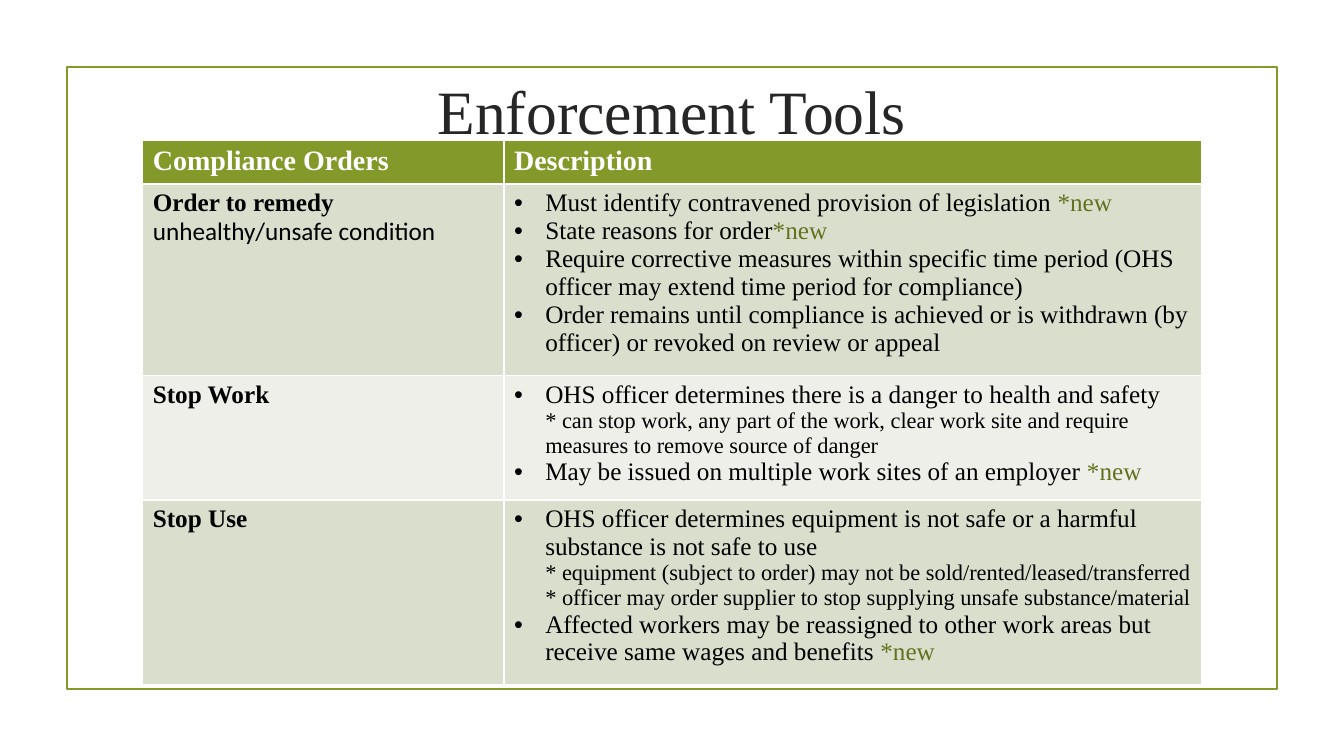
from lxml.etree import SubElement
from pptx import Presentation
from pptx.dml.color import RGBColor
from pptx.enum.shapes import MSO_SHAPE as Shape
from pptx.enum.text import MSO_ANCHOR as Anchor, PP_ALIGN as Align
from pptx.oxml.ns import qn
from pptx.util import Inches, Pt

UNIT = Inches(1) / 12
WIDE, HIGH = 160, 90
LEFT = 17
COLS = (43, 83)
ROWS = (4.9, 21, 13.8, 20.4)
FACE = "Times New Roman"
GREEN, TAG = "83992A", "62731F"
BANDS = ("D9DECD", "EDEFE8")
HEADS = ("Compliance Orders", "Description")
NEW = "*new"
ORDERS = (
    ("Order to remedy \nunhealthy/unsafe condition", (
        ("Must identify contravened provision of legislation ", NEW),
        ("State reasons for order", NEW),
        ("Require corrective measures within specific time period "
         "(OHS officer may extend time period for compliance)", ""),
        ("Order remains until compliance is achieved or is withdrawn "
         "(by officer) or revoked on review or appeal", ""),
    )),
    ("Stop Work", (
        ("OHS officer determines there is a danger to health and safety\n"
         "* can stop work, any part of the work, clear work site and require "
         "measures to remove source of danger", ""),
        ("May be issued on multiple work sites of an employer ", NEW),
    )),
    ("Stop Use", (
        ("OHS officer determines equipment is not safe or a harmful "
         "substance is not safe to use\n"
         "* equipment (subject to order) may not be sold/rented/leased/transferred\n"
         "* officer may order supplier to stop supplying unsafe substance/material", ""),
        ("Affected workers may be reassigned to other work areas but "
         "receive same wages and benefits ", NEW),
    )),
)


def grid(*units):
    return [round(unit * UNIT) for unit in units]


def color(code):
    return RGBColor.from_string(code)


def style(run, size, code, bold=False):
    font = run.font
    font.name, font.size, font.bold = FACE, Pt(size), bold
    font.color.rgb = color(code)


def frame(slide):
    box = slide.shapes.add_shape(Shape.RECTANGLE, *grid(8, 8, 144, 74))
    box.shadow.inherit = False
    box.fill.background()
    box.line.color.rgb = color(GREEN)
    box.line.width = Pt(1.25)


def title(slide, text):
    box = slide.shapes.add_textbox(*grid(LEFT, 4.5, sum(COLS), 17.2))
    body = box.text_frame
    body.word_wrap = True
    body.vertical_anchor = Anchor.MIDDLE
    body.text = text
    para = body.paragraphs[0]
    para.alignment = Align.CENTER
    style(para.runs[0], 44, "262626")


def paint(cell, code):
    cell.fill.solid()
    cell.fill.fore_color.rgb = color(code)


def label(cell, text, size, code, fill):
    paint(cell, fill)
    cell.text_frame.text = text
    for run in cell.text_frame.paragraphs[0].runs:
        style(run, size, code, True)


def bullet(para, text, tag):
    para.text = text
    props = para._p.get_or_add_pPr()
    indent = Inches(0.31)
    props.set("marL", str(indent))
    props.set("indent", str(-indent))
    SubElement(props, qn("a:buFont"), typeface="Arial")
    SubElement(props, qn("a:buChar"), char="•")
    for run in para.runs:
        style(run, 16 if run.text.startswith("* ") else 18, "000000")
    for gap in para._p.findall(qn("a:br")):
        SubElement(gap, qn("a:rPr"), sz="1600")
    if tag:
        run = para.add_run()
        run.text = tag
        style(run, 18, TAG)


def points(cell, items, fill):
    paint(cell, fill)
    body = cell.text_frame
    for i, (text, tag) in enumerate(items):
        para = body.add_paragraph() if i else body.paragraphs[0]
        bullet(para, text, tag)


def orders(slide):
    place = grid(LEFT, 16.7, sum(COLS), sum(ROWS))
    table = slide.shapes.add_table(len(ROWS), len(COLS), *place).table
    for col, width in zip(table.columns, grid(*COLS)):
        col.width = width
    for row, height in zip(table.rows, grid(*ROWS)):
        row.height = height
    for i, head in enumerate(HEADS):
        label(table.cell(0, i), head, 20, "FFFFFF", GREEN)
    for i, (name, items) in enumerate(ORDERS):
        fill = BANDS[i % 2]
        label(table.cell(i + 1, 0), name, 18, "000000", fill)
        points(table.cell(i + 1, 1), items, fill)


def main():
    deck = Presentation()
    deck.slide_width, deck.slide_height = grid(WIDE, HIGH)
    slide = deck.slides.add_slide(deck.slide_layouts[6])
    frame(slide)
    title(slide, "Enforcement Tools")
    orders(slide)
    deck.save("out.pptx")


if __name__ == "__main__":
    main()
